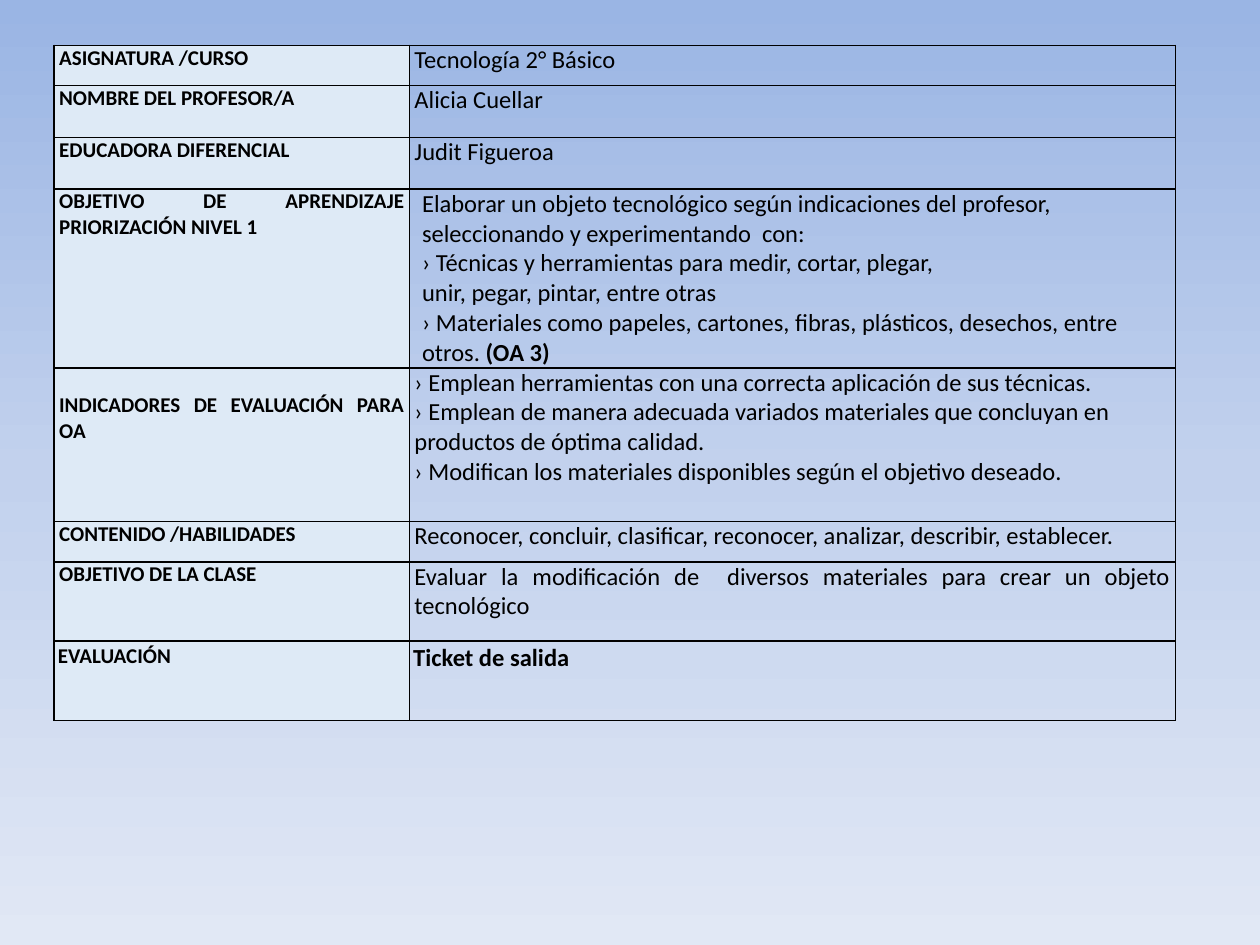
from copy import deepcopy
from dataclasses import dataclass

from lxml import etree
from pptx import Presentation
from pptx.dml.color import RGBColor
from pptx.enum.text import PP_ALIGN
from pptx.oxml.ns import qn
from pptx.util import Inches, Pt


@dataclass(frozen=True)
class Theme:
    font: str = "Calibri"
    label_size: int = 12
    detail_size: int = 14
    ink: str = "000000"
    label_fill: str = "DEEAF6"
    border_width: int = 1
    sky: tuple = ((0, "9AB5E4"), (0.5, "C2D1ED"), (1, "E1E8F5"))


THEME = Theme()
COLUMN_WIDTHS = (2.82, 6.08)
TIGHT = (0.04, 0)  # side and top insets of a cell
WIDE = (0.1, 0)
LOWERED = (0.04, 0.2)
CLOSING = (0.03, 0.02)
JUSTIFIED, LEFT = PP_ALIGN.JUSTIFY, PP_ALIGN.LEFT


@dataclass(frozen=True)
class PlanRow:
    height: float
    label: str
    details: tuple
    bold_ending: str = ""
    detail_bold: bool = False
    alignment: PP_ALIGN = JUSTIFIED
    label_insets: tuple = TIGHT
    detail_insets: tuple = TIGHT


PLAN = (
    PlanRow(0.32, "ASIGNATURA /CURSO", ("Tecnología 2° Básico",)),
    PlanRow(0.41, "NOMBRE DEL PROFESOR/A", ("Alicia Cuellar",)),
    PlanRow(0.41, "EDUCADORA DIFERENCIAL", ("Judit Figueroa",)),
    PlanRow(1.23, "OBJETIVO DE APRENDIZAJE PRIORIZACIÓN NIVEL 1", (
        "Elaborar un objeto tecnológico según indicaciones del profesor, "
        "seleccionando y experimentando  con:",
        "› Técnicas y herramientas para medir, cortar, plegar,",
        "unir, pegar, pintar, entre otras",
        "› Materiales como papeles, cartones, fibras, plásticos, desechos, entre otros. ",
    ), bold_ending="(OA 3)", alignment=LEFT, detail_insets=WIDE),
    PlanRow(1.22, "INDICADORES DE EVALUACIÓN PARA OA", (
        "› Emplean herramientas con una correcta aplicación de sus técnicas.",
        "› Emplean de manera adecuada variados materiales que concluyan en "
        "productos de óptima calidad.",
        "› Modifican los materiales disponibles según el objetivo deseado.",
    ), alignment=LEFT, label_insets=LOWERED),
    PlanRow(0.32, "CONTENIDO /HABILIDADES", (
        "Reconocer, concluir, clasificar, reconocer, analizar, describir, establecer.",)),
    PlanRow(0.63, "OBJETIVO DE LA CLASE", (
        "Evaluar la modificación de  diversos materiales para crear un objeto tecnológico",)),
    PlanRow(0.63, "EVALUACIÓN", ("Ticket de salida",), detail_bold=True,
            label_insets=CLOSING, detail_insets=CLOSING),
)


def paint_background(slide):
    """Fill the slide with the theme's gradient, from top to bottom."""
    fill = slide.background.fill
    fill.gradient()
    fill.gradient_angle = 270
    stop_list = slide.element.find(".//" + qn("a:gsLst"))
    stop_list.append(deepcopy(stop_list[-1]))
    for stop, (position, color) in zip(fill.gradient_stops, THEME.sky):
        stop.position = position
        stop.color.rgb = RGBColor.from_string(color)


def add_borders(cell):
    properties = cell._tc.get_or_add_tcPr()
    for side in ("a:lnL", "a:lnR", "a:lnT", "a:lnB"):
        line = etree.SubElement(properties, qn(side), w=str(Pt(THEME.border_width)))
        solid = etree.SubElement(line, qn("a:solidFill"))
        etree.SubElement(solid, qn("a:srgbClr"), val=THEME.ink)


def write_cell(cell, lines, size, bold, alignment, insets):
    side, top = insets
    cell.margin_left = cell.margin_right = Inches(side)
    cell.margin_top = Inches(top)
    cell.margin_bottom = Inches(0)
    cell.text = "\n".join(lines)
    for paragraph in cell.text_frame.paragraphs:
        paragraph.alignment = alignment
        font = paragraph.font
        font.name, font.size, font.bold = THEME.font, Pt(size), bold
        font.color.rgb = RGBColor.from_string(THEME.ink)
    add_borders(cell)


def write_row(label, detail, row):
    write_cell(label, (row.label,), THEME.label_size, True, JUSTIFIED, row.label_insets)
    label.fill.solid()
    label.fill.fore_color.rgb = RGBColor.from_string(THEME.label_fill)

    write_cell(detail, row.details, THEME.detail_size, row.detail_bold,
               row.alignment, row.detail_insets)
    detail.fill.background()
    if row.bold_ending:
        ending = detail.text_frame.paragraphs[-1].add_run()
        ending.text = row.bold_ending
        ending.font.bold = True


def add_plan(slide):
    height = sum(row.height for row in PLAN)
    plan = slide.shapes.add_table(
        len(PLAN), len(COLUMN_WIDTHS), Inches(0.43), Inches(0.36),
        Inches(sum(COLUMN_WIDTHS)), Inches(height)).table
    plan.first_row = plan.horz_banding = False
    for column, width in zip(plan.columns, COLUMN_WIDTHS):
        column.width = Inches(width)
    for table_row, row in zip(plan.rows, PLAN):
        table_row.height = Inches(row.height)
        label, detail = table_row.cells
        write_row(label, detail, row)


def main():
    deck = Presentation()
    deck.slide_width, deck.slide_height = Inches(10), Inches(7.5)
    slide = deck.slides.add_slide(deck.slide_layouts[6])
    paint_background(slide)
    add_plan(slide)
    deck.save("out.pptx")


if __name__ == "__main__":
    main()
